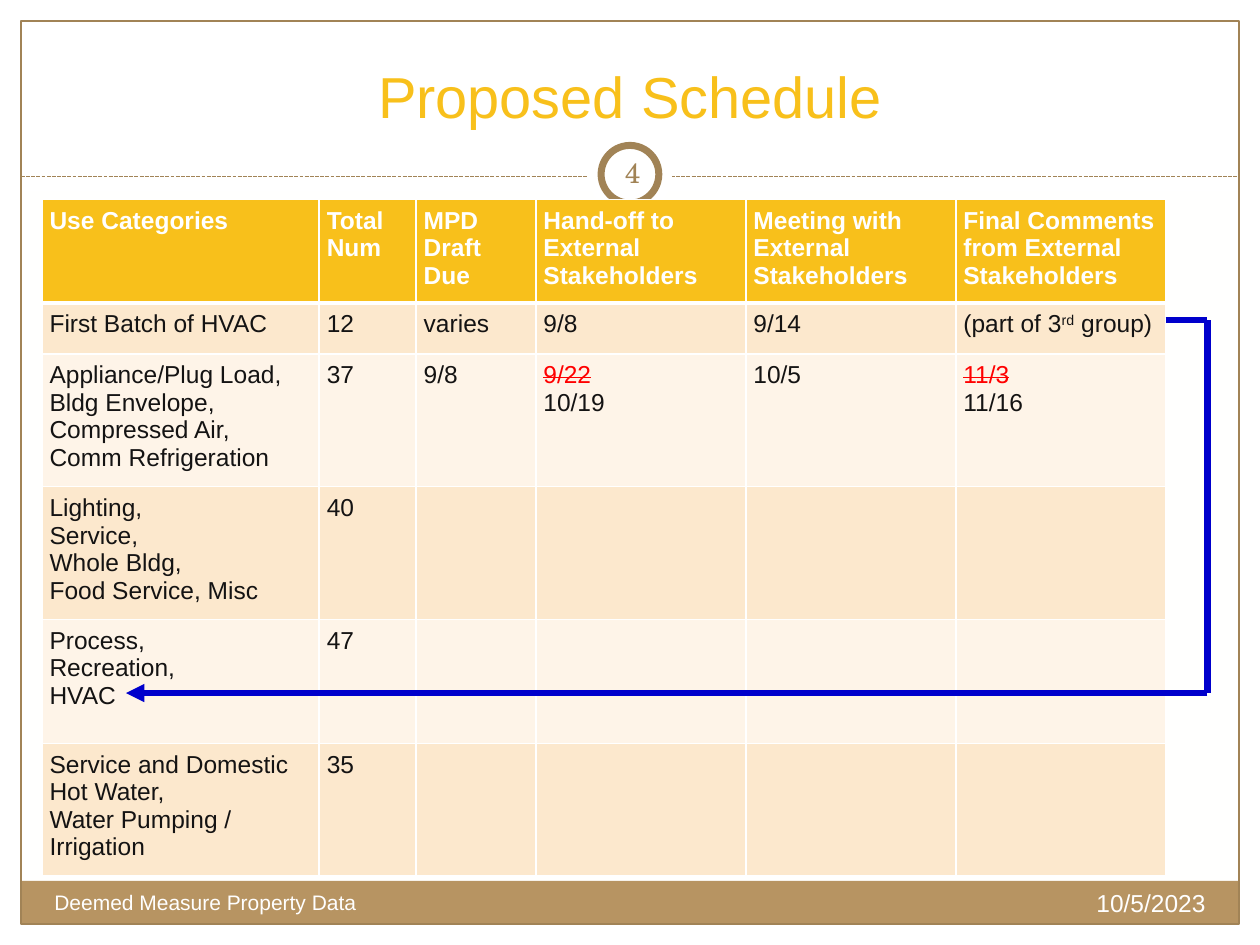
from copy import deepcopy

from pptx import Presentation
from pptx.dml.color import RGBColor
from pptx.enum.dml import MSO_LINE
from pptx.enum.shapes import MSO_CONNECTOR, MSO_SHAPE
from pptx.enum.text import MSO_ANCHOR, PP_ALIGN
from pptx.oxml import parse_xml
from pptx.oxml.ns import nsdecls, qn
from pptx.util import Inches, Pt

COLORS = {
    "background": "FFFFFE", "white": "FFFFFF", "brown": "A18356", "footer": "B79462",
    "gold": "F8C01B", "band": "FCE8CD", "light": "FEF4E8",
    "text": "141313", "red": "FF0000", "blue": "0000CC",
}
GRID_COLUMNS, GRID_ROWS = 120, 90
COLUMN_WIDTHS = [26.4, 9.24, 11.4, 20, 20, 20]
ROW_HEIGHTS = [9.24, 4.86] + [11.8] * 4

# A line feed starts a paragraph, a vertical tab breaks the line
SCHEDULE = [
    ["Use Categories", "Total Num", "MPD Draft Due", "Hand-off to External Stakeholders",
     "Meeting with External Stakeholders", "Final Comments from External Stakeholders"],
    ["First Batch of HVAC", "12", "varies", "9/8", "9/14", "(part of 3"],
    ["Appliance/Plug Load, Bldg Envelope, Compressed Air,\nComm Refrigeration",
     "37", "9/8", "9/22\n10/19", "10/5", "11/3\n11/16"],
    ["Lighting,\nService,\nWhole Bldg, \vFood Service, Misc", "40"],
    ["Process, \vRecreation, \vHVAC", "47"],
    ["Service and Domestic Hot Water, \vWater Pumping / Irrigation", "35"],
]


def rgb(name):
    return RGBColor.from_string(COLORS[name])


class SlideBuilder:
    """Holds the style and the current slide; lengths are grid units."""

    font = "Arial"

    def __init__(self, presentation):
        self.unit_x = presentation.slide_width / GRID_COLUMNS
        self.unit_y = presentation.slide_height / GRID_ROWS
        self.slide = presentation.slides.add_slide(presentation.slide_layouts[6])
        self.slide.background.fill.solid()
        self.slide.background.fill.fore_color.rgb = rgb("background")

    def x(self, columns):
        return round(columns * self.unit_x)

    def y(self, rows):
        return round(rows * self.unit_y)

    def box(self, left, top, width, height):
        return self.x(left), self.y(top), self.x(width), self.y(height)

    def format_text(self, text_frame, size, color, bold=False, font=None):
        for paragraph in text_frame.paragraphs:
            for run in paragraph.runs:
                run.font.name = font or self.font
                run.font.size = Pt(size)
                run.font.bold = bold
                run.font.color.rgb = rgb(color)
            for line_break in paragraph._p.findall(qn("a:br")):
                line_break.append(deepcopy(paragraph.runs[0]._r.rPr))

    def shape(self, kind, area, fill=None, line=None, width=0.75):
        shape = self.slide.shapes.add_shape(kind, *self.box(*area))
        shape.shadow.inherit = False
        if fill:
            shape.fill.solid()
            shape.fill.fore_color.rgb = rgb(fill)
        else:
            shape.fill.background()
        if line:
            shape.line.color.rgb = rgb(line)
            shape.line.width = Pt(width)
        else:
            shape.line.fill.background()

    def text(self, text, area, size, color, align=PP_ALIGN.LEFT,
             anchor=MSO_ANCHOR.TOP, font=None, inset=0.1):
        text_frame = self.slide.shapes.add_textbox(*self.box(*area)).text_frame
        text_frame.word_wrap = True
        text_frame.vertical_anchor = anchor
        text_frame.margin_left = text_frame.margin_right = Inches(inset)
        text_frame.text = text
        text_frame.paragraphs[0].alignment = align
        self.format_text(text_frame, size, color, font=font)

    def line(self, start, end, color, width, dash=None, arrow=False, shapes=None):
        connector = (shapes or self.slide.shapes).add_connector(
            MSO_CONNECTOR.STRAIGHT, self.x(start[0]), self.y(start[1]),
            self.x(end[0]), self.y(end[1]))
        connector.line.color.rgb = rgb(color)
        connector.line.width = Pt(width)
        if dash:
            connector.line.dash_style = dash
        if arrow:
            connector.line._get_or_add_ln().append(
                parse_xml(f'<a:tailEnd {nsdecls("a")} type="triangle"/>'))
        connector._element.spPr.append(parse_xml(f'<a:effectLst {nsdecls("a")}/>'))

    def path_arrow(self, points, color, width):
        group = self.slide.shapes.add_group_shape()
        for start, end in zip(points, points[1:]):
            self.line(start, end, color, width, arrow=end == points[-1], shapes=group.shapes)

    def cell(self, cell, text, fill, color, bold, bottom):
        properties = cell._tc.get_or_add_tcPr()
        for side, width in (("L", 1), ("R", 1), ("T", 1), ("B", bottom)):
            properties.append(parse_xml(
                f'<a:ln{side} {nsdecls("a")} w="{Pt(width)}"><a:solidFill>'
                f'<a:srgbClr val="{COLORS["white"]}"/></a:solidFill></a:ln{side}>'))
        cell.fill.solid()
        cell.fill.fore_color.rgb = rgb(fill)
        cell.margin_left = cell.margin_right = Inches(0.06)
        cell.margin_top = cell.margin_bottom = Inches(0.06)
        cell.text_frame.text = text
        self.format_text(cell.text_frame, 14, color, bold)

    def table(self, left, top, rows, widths, heights):
        table = self.slide.shapes.add_table(
            len(heights), len(widths),
            *self.box(left, top, sum(widths), sum(heights))).table
        table.first_row = table.horz_banding = False
        for column, width in zip(table.columns, widths):
            column.width = self.x(width)
        for index, (row, height, texts) in enumerate(zip(table.rows, heights, rows)):
            row.height = self.y(height)
            header = index == 0
            fill = "gold" if header else "band" if index % 2 else "light"
            texts = texts + [""] * (len(widths) - len(texts))
            for cell, text in zip(row.cells, texts):
                self.cell(cell, text, fill, "white" if header else "text",
                          header, 3 if header else 1)
        return table

    def strike_first_line(self, cell):
        run = cell.text_frame.paragraphs[0].runs[0]
        run.font.color.rgb = rgb("red")
        run._r.get_or_add_rPr().set("strike", "sngStrike")

    def add_ordinal(self, cell, ordinal, rest):
        paragraph = cell.text_frame.paragraphs[0]
        for text in (ordinal, rest):
            paragraph.add_run().text = text
        self.format_text(cell.text_frame, 14, "text")
        paragraph.runs[1]._r.get_or_add_rPr().set("baseline", "30000")


def main():
    presentation = Presentation()
    presentation.slide_width, presentation.slide_height = Inches(10), Inches(7.5)
    builder = SlideBuilder(presentation)

    # Margins, footer band and frame
    for area in ((0, 88, 120, 2), (0, 0, 120, 18.24), (0, 0, 2, 90), (118, 0, 2, 90)):
        builder.shape(MSO_SHAPE.RECTANGLE, area, "white")
    builder.shape(MSO_SHAPE.RECTANGLE, (2, 83.9, 116, 4.1), "footer")
    builder.shape(MSO_SHAPE.RECTANGLE, (2, 2, 116, 86), line="brown")

    # Dashed divider with the number ring
    builder.line((2, 16.8), (118, 16.8), "brown", 0.75, dash=MSO_LINE.SQUARE_DOT)
    builder.shape(MSO_SHAPE.OVAL, (56, 12.6, 8, 8), "white")
    builder.shape(MSO_SHAPE.OVAL, (57.25, 13.85, 5.5, 5.5), "white", "brown", 4)

    # Title, date, footer and slide number
    builder.text("Proposed Schedule", (4, 3, 112, 10), 33, "gold",
                 PP_ALIGN.CENTER, MSO_ANCHOR.BOTTOM)
    builder.text("10/5/2023", (76, 84, 40, 4.8), 14, "white", PP_ALIGN.RIGHT)
    builder.text("Deemed Measure Property Data", (4, 84.1, 47, 4.8), 12, "white")
    builder.text("4", (57.25, 13.5, 6, 5.75), 16, "brown", PP_ALIGN.CENTER,
                 MSO_ANCHOR.MIDDLE, "TeX Gyre Schola", 0.05)

    # Schedule table
    table = builder.table(4, 19, SCHEDULE, COLUMN_WIDTHS, ROW_HEIGHTS)
    builder.add_ordinal(table.cell(1, 5), "rd", " group)")
    for column in (3, 5):
        builder.strike_first_line(table.cell(2, column))

    # Arrow from the first batch to the HVAC group
    builder.path_arrow([(111, 30.5), (115, 30.5), (115, 66), (12, 66)], "blue", 3.5)

    presentation.save("out.pptx")


if __name__ == "__main__":
    main()
